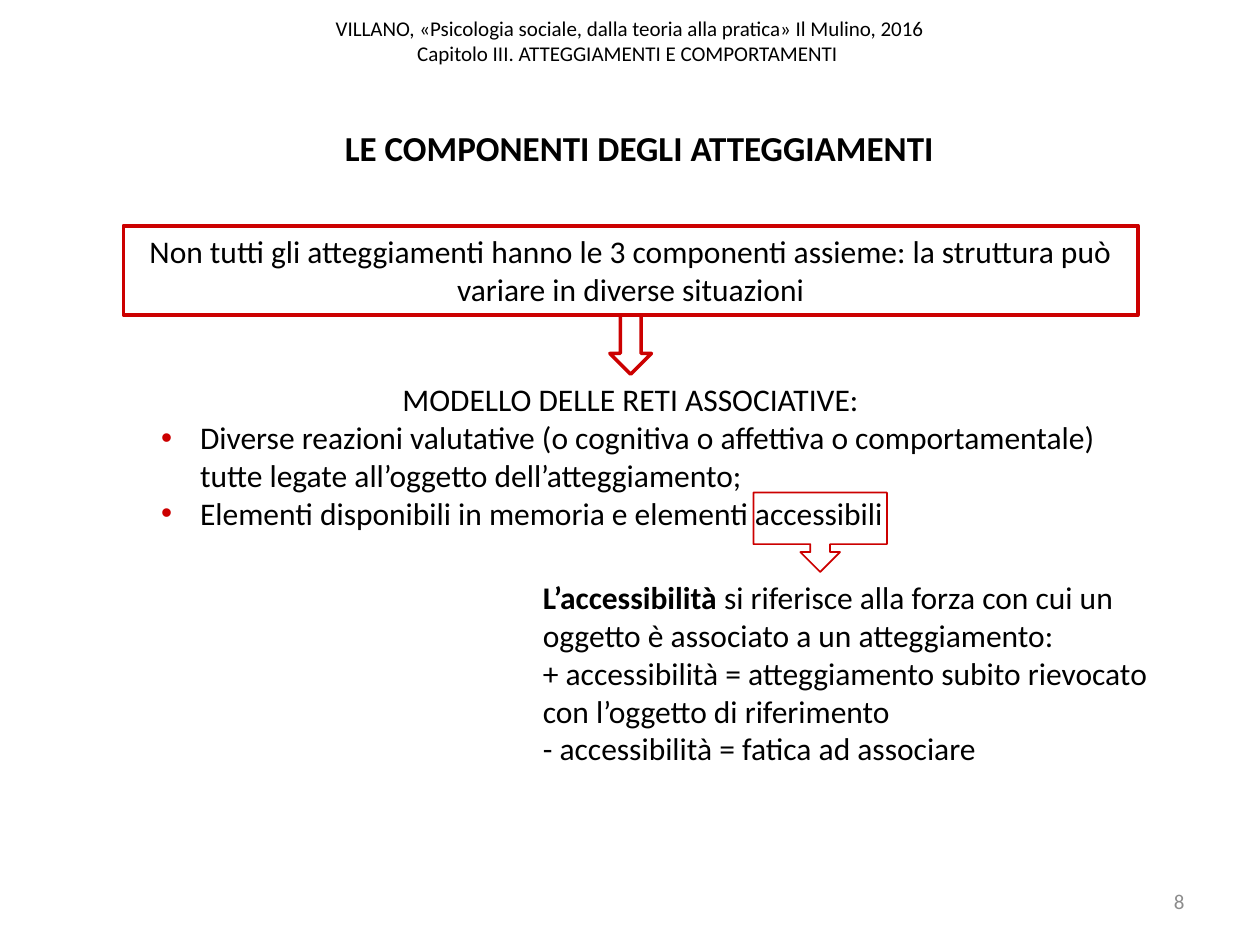
from dataclasses import dataclass

import pptx
import pptx.dml.color
import pptx.enum.shapes
import pptx.enum.text
import pptx.oxml
import pptx.oxml.ns
import pptx.util
from pptx.util import Inches

ALIGN = pptx.enum.text.PP_ALIGN
ANCHOR = pptx.enum.text.MSO_ANCHOR
SHAPE = pptx.enum.shapes.MSO_SHAPE


@dataclass(frozen=True)
class Theme:
    font: str = "Calibri"
    ink: str = "000000"
    muted: str = "8C8C8C"
    accent: str = "CC0000"
    small: int = 12
    body: int = 18
    title: int = 20


THEME = Theme()


def rgb(value):
    return pptx.dml.color.RGBColor.from_string(value)


def place(box, left, top, width, height):
    box.left, box.top = Inches(left), Inches(top)
    box.width, box.height = Inches(width), Inches(height)


def add_bullet(para, indent=0.31):
    properties = para._p.get_or_add_pPr()
    properties.set("marL", str(Inches(indent)))
    properties.set("indent", str(-Inches(indent)))
    namespace = pptx.oxml.ns.nsdecls("a")
    for markup in (
        f'<a:buClr {namespace}><a:srgbClr val="{THEME.accent}"/></a:buClr>',
        f'<a:buFont {namespace} typeface="Arial"/>',
        f'<a:buChar {namespace} char="•"/>',
    ):
        properties.append(pptx.oxml.parse_xml(markup))


def write(para, text, size=THEME.body, color=THEME.ink, bold=False,
          align=ALIGN.LEFT, bullet=False):
    """Append text to a paragraph; a newline becomes a line break."""
    para.alignment = align
    if bullet:
        add_bullet(para)
    for number, line in enumerate(text.split("\n")):
        if number:
            para.add_line_break()
        span = para.add_run()
        span.text = line
        span.font.name = THEME.font
        span.font.size = pptx.util.Pt(size)
        span.font.bold = bold
        span.font.color.rgb = rgb(color)


def prepare_frame(box, anchor=ANCHOR.TOP):
    frame = box.text_frame
    frame.word_wrap = True
    frame.auto_size = pptx.enum.text.MSO_AUTO_SIZE.NONE
    frame.vertical_anchor = anchor
    return frame


def add_text(slide, position, anchor=ANCHOR.TOP):
    box = slide.shapes.add_textbox(*map(Inches, position))
    return prepare_frame(box, anchor)


def add_outline(slide, kind, position, weight):
    shape = slide.shapes.add_shape(kind, *map(Inches, position))
    shape.shadow.inherit = False
    shape.fill.background()
    shape.line.color.rgb = rgb(THEME.accent)
    shape.line.width = pptx.util.Pt(weight)
    return shape


def add_title(slide, text):
    title = slide.shapes.title
    place(title, 2.4, 0.95, 5.35, 0.44)
    write(prepare_frame(title).paragraphs[0], text, size=THEME.title,
          bold=True, align=ALIGN.CENTER)


def add_model(slide):
    frame = add_text(slide, (1.18, 2.97, 7.65, 1.31))
    write(frame.paragraphs[0], "MODELLO DELLE RETI ASSOCIATIVE:",
          align=ALIGN.CENTER)
    for text in (
        "Diverse reazioni valutative (o cognitiva o affettiva o "
        "comportamentale) tutte legate all’oggetto dell’atteggiamento;",
        "Elementi disponibili in memoria e elementi accessibili",
    ):
        write(frame.add_paragraph(), text, bullet=True)


def add_accessibility(slide):
    frame = add_text(slide, (4.21, 4.54, 5.12, 1.62))
    definition = frame.paragraphs[0]
    write(definition, "L’accessibilità", bold=True)
    write(definition, " si riferisce alla forza con cui un oggetto è "
                      "associato a un atteggiamento:")
    for text in (
        "+ accessibilità = atteggiamento subito rievocato con l’oggetto "
        "di riferimento",
        "- accessibilità = fatica ad associare",
    ):
        write(frame.add_paragraph(), text)


def main():
    deck = pptx.Presentation()
    deck.slide_width, deck.slide_height = Inches(10), Inches(7.5)
    slide = deck.slides.add_slide(deck.slide_layouts[5])

    header = add_text(slide, (0, -0.11, 10, 0.87), ANCHOR.MIDDLE)
    write(header.paragraphs[0],
          "VILLANO, «Psicologia sociale, dalla teoria alla pratica» "
          "Il Mulino, 2016\n"
          "Capitolo III. ATTEGGIAMENTI E COMPORTAMENTI ",
          size=THEME.small, align=ALIGN.CENTER)
    page_number = add_text(slide, (7.17, 6.95, 2.33, 0.4), ANCHOR.MIDDLE)
    write(page_number.paragraphs[0], "8", size=THEME.small,
          color=THEME.muted, align=ALIGN.RIGHT)
    add_title(slide, "LE COMPONENTI DEGLI ATTEGGIAMENTI")

    premise = add_outline(slide, SHAPE.RECTANGLE, (0.98, 1.79, 8.05, 0.71), 2.25)
    write(prepare_frame(premise).paragraphs[0],
          "Non tutti gli atteggiamenti hanno le 3 componenti assieme: "
          "la struttura può variare in diverse situazioni",
          align=ALIGN.CENTER)
    add_model(slide)
    arrow = add_outline(slide, SHAPE.RIGHT_ARROW, (4.77, 2.57, 0.47, 0.33), 2)
    arrow.rotation = 90
    add_outline(slide, SHAPE.DOWN_ARROW_CALLOUT, (5.98, 3.91, 1.06, 0.63), 1)
    add_accessibility(slide)

    deck.save("out.pptx")


if __name__ == "__main__":
    main()
